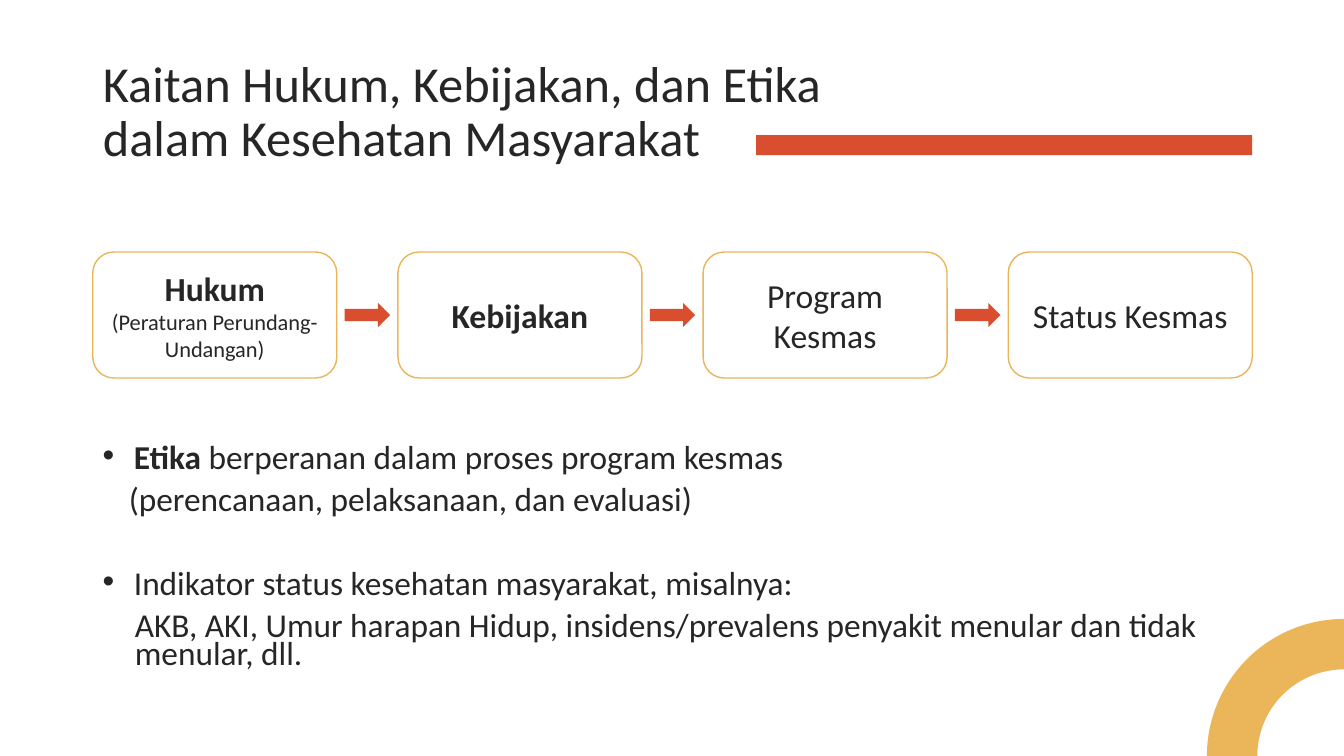
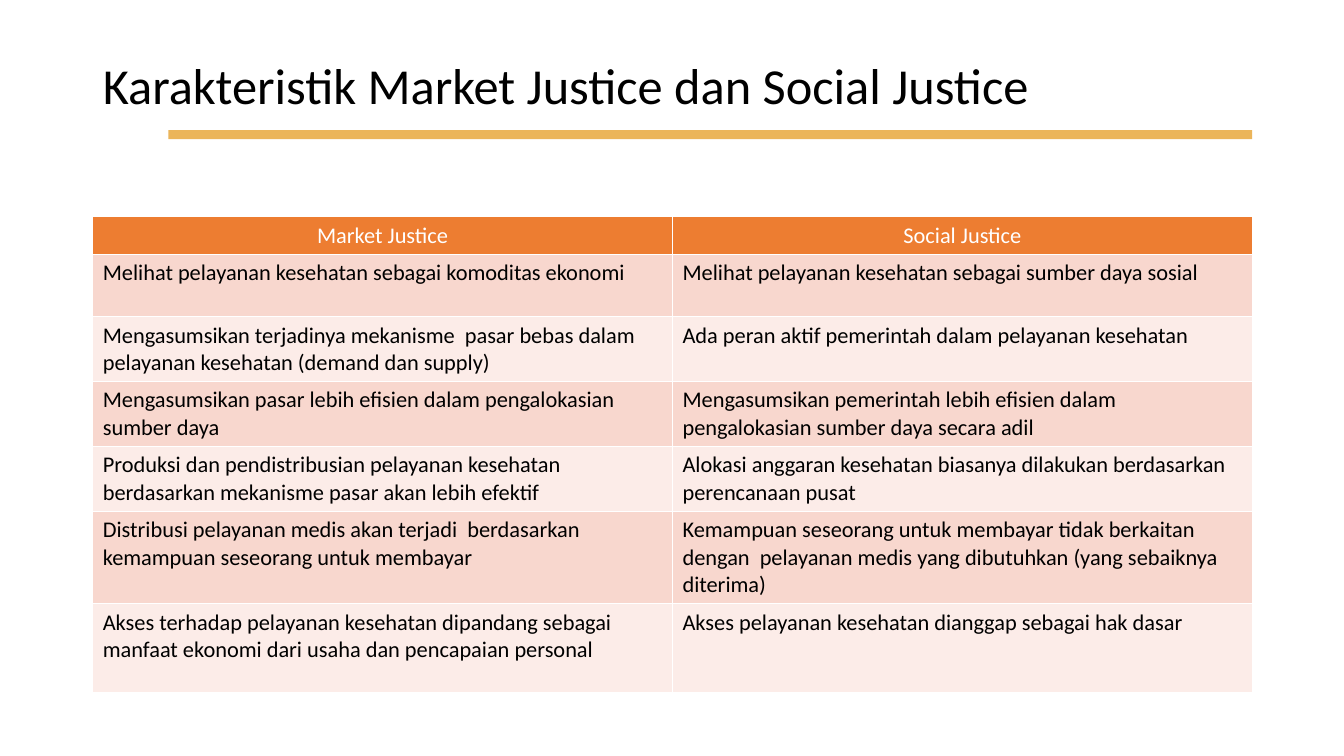
"""Build two slides on law, policy and ethics in public health."""
import pptx
import pptx.dml.color
import pptx.enum.shapes
import pptx.enum.text
import pptx.oxml
import pptx.oxml.ns
import pptx.util

Inches, Pt = pptx.util.Inches, pptx.util.Pt
Color = pptx.dml.color.RGBColor
Shape = pptx.enum.shapes.MSO_SHAPE
Align, Anchor = pptx.enum.text.PP_ALIGN, pptx.enum.text.MSO_ANCHOR
Fit = pptx.enum.text.MSO_AUTO_SIZE

INK = Color(0x26, 0x26, 0x26)
BLACK = Color(0, 0, 0)
WHITE = Color(255, 255, 255)
RED = Color(0xD8, 0x4E, 0x2E)
GOLD = Color(0xEB, 0xB5, 0x5A)
HEAD = Color(0xED, 0x7D, 0x31)
BANDS = Color(0xF8, 0xD7, 0xCE), Color(0xFC, 0xEC, 0xE8)

WIDE, HIGH = 13.33, 7.5
LEFT, SPAN = 0.92, 11.5

STEPS = [
    [("Hukum", 24, True), ("(Peraturan Perundang-Undangan)", 16, False)],
    [("Kebijakan", 24, True)],
    [("Program Kesmas", 24, False)],
    [("Status Kesmas", 24, False)],
]
NOTES = [
    {"runs": [("Etika ", True), ("berperanan dalam proses program kesmas", False)],
     "dot": True, "left": 0.31, "gap": 10},
    {"runs": [("(perencanaan, pelaksanaan, dan evaluasi)", False)],
     "dot": False, "left": 0.26, "gap": 10},
    {"runs": [("Indikator status kesehatan masyarakat, misalnya:", False)],
     "dot": True, "left": 0.31, "gap": 40},
    {"runs": [("AKB, AKI, Umur harapan Hidup, insidens/prevalens penyakit menular "
               "dan tidak menular, dll.", False)],
     "dot": False, "left": 0.32, "gap": 10},
]
ROWS = [
    (0.36, "Market Justice", "Social Justice"),
    (0.62, "Melihat pelayanan kesehatan sebagai komoditas ekonomi",
     "Melihat pelayanan kesehatan sebagai sumber daya sosial"),
    (0.62, "Mengasumsikan terjadinya mekanisme  pasar bebas dalam pelayanan "
     "kesehatan (demand dan supply)",
     "Ada peran aktif pemerintah dalam pelayanan kesehatan"),
    (0.62, "Mengasumsikan pasar lebih efisien dalam pengalokasian sumber daya",
     "Mengasumsikan pemerintah lebih efisien dalam pengalokasian sumber daya "
     "secara adil"),
    (0.62, "Produksi dan pendistribusian pelayanan kesehatan berdasarkan "
     "mekanisme pasar akan lebih efektif",
     "Alokasi anggaran kesehatan biasanya dilakukan berdasarkan perencanaan pusat"),
    (0.88, "Distribusi pelayanan medis akan terjadi  berdasarkan kemampuan "
     "seseorang untuk membayar",
     "Kemampuan seseorang untuk membayar tidak berkaitan dengan  pelayanan medis "
     "yang dibutuhkan (yang sebaiknya diterima)"),
    (0.88, "Akses terhadap pelayanan kesehatan dipandang sebagai manfaat ekonomi "
     "dari usaha dan pencapaian personal",
     "Akses pelayanan kesehatan dianggap sebagai hak dasar"),
]


def style(item, **vals):
    for name, val in vals.items():
        setattr(item, name, val)


def write(par, text, size, color, bold=False):
    run = par.add_run()
    run.text = text
    style(run.font, name="Calibri", size=Pt(size), bold=bold)
    run.font.color.rgb = color


def place(*box):
    return [Inches(val) for val in box]


def start(deck, text, color, *box):
    slide = deck.slides.add_slide(deck.slide_layouts[5])
    title = slide.shapes.title
    style(title, **dict(zip(("left", "top", "width", "height"), place(*box))))
    style(title.text_frame, word_wrap=True, auto_size=Fit.NONE,
          vertical_anchor=Anchor.MIDDLE)
    par = title.text_frame.paragraphs[0]
    style(par, alignment=Align.LEFT, line_spacing=0.9)
    write(par, text, 36, color)
    return slide


def draw(slide, kind, fill, *box):
    shape = slide.shapes.add_shape(kind, *place(*box))
    shape.shadow.inherit = False
    shape.line.fill.background()
    if fill is None:
        shape.fill.background()
    else:
        shape.fill.solid()
        shape.fill.fore_color.rgb = fill
    return shape


def add_flow(slide):
    top, width, height, arrow, tall = 2.5, 2.42, 1.25, 0.45, 0.24
    pitch = (SPAN - width) / (len(STEPS) - 1)
    for num, lines in enumerate(STEPS):
        left = LEFT + num * pitch
        card = draw(slide, Shape.ROUNDED_RECTANGLE, None, left, top, width, height)
        card.line.color.rgb = GOLD
        card.line.width = Pt(1)
        frame = card.text_frame
        style(frame, word_wrap=True, vertical_anchor=Anchor.MIDDLE)
        for row, (text, size, bold) in enumerate(lines):
            par = frame.add_paragraph() if row else frame.paragraphs[0]
            par.alignment = Align.CENTER
            write(par, text, size, INK, bold)
        if num:
            draw(slide, Shape.RIGHT_ARROW, RED, left - (pitch - width + arrow) / 2,
                 top + (height - tall) / 2, arrow, tall)


def add_notes(slide):
    frame = slide.shapes.add_textbox(*place(LEFT, 4.39, SPAN, 2.36)).text_frame
    frame.word_wrap = True
    for num, note in enumerate(NOTES):
        par = frame.add_paragraph() if num else frame.paragraphs[0]
        style(par, line_spacing=0.7, space_before=Pt(note["gap"]))
        props = par._p.get_or_add_pPr()
        props.set("marL", str(Inches(note["left"])))
        if note["dot"]:
            props.set("indent", str(-Inches(note["left"])))
            for tag, key, val in (("buFont", "typeface", "Arial"), ("buChar", "char", "•")):
                mark = pptx.oxml.parse_xml(
                    f'<a:{tag} {pptx.oxml.ns.nsdecls("a")} {key}="{val}"/>')
                props.append(mark)
        for text, bold in note["runs"]:
            write(par, text, 23.8, INK, bold)


def add_edges(cell):
    props = cell._tc.get_or_add_tcPr()
    for side in "LRTB":
        props.append(pptx.oxml.parse_xml(
            f'<a:ln{side} {pptx.oxml.ns.nsdecls("a")} w="{Pt(1)}"><a:solidFill>'
            f'<a:srgbClr val="{WHITE}"/></a:solidFill></a:ln{side}>'))


def add_grid(slide):
    total = sum(row[0] for row in ROWS)
    table = slide.shapes.add_table(
        len(ROWS), 2, *place(LEFT, 2.15, SPAN, total)).table
    for num, (height, *texts) in enumerate(ROWS):
        table.rows[num].height = Inches(height)
        for col, text in enumerate(texts):
            cell = table.cell(num, col)
            add_edges(cell)
            cell.fill.solid()
            cell.fill.fore_color.rgb = BANDS[(num - 1) % 2] if num else HEAD
            par = cell.text_frame.paragraphs[0]
            par.alignment = Align.LEFT if num else Align.CENTER
            write(par, text, 16, BLACK if num else WHITE)


def main():
    deck = pptx.Presentation()
    style(deck, slide_width=Inches(WIDE), slide_height=Inches(HIGH))

    slide = start(deck, "Kaitan Hukum, Kebijakan, dan Etika dalam Kesehatan Masyarakat",
                  INK, LEFT, 0.4, 7.83, 1.45)
    draw(slide, Shape.RECTANGLE, RED, 7.5, 1.34, 4.92, 0.2)
    add_notes(slide)
    add_flow(slide)
    reach, thick = 1.36, 0.5
    arc = draw(slide, Shape.BLOCK_ARC, GOLD, WIDE - reach, HIGH - reach,
               2 * reach, 2 * reach)
    for num, val in enumerate((108, 162, thick / (2 * reach))):
        arc.adjustments[num] = val

    slide = start(deck, "Karakteristik Market Justice dan Social Justice",
                  BLACK, LEFT, 0.37, 10.46, 1.01)
    add_grid(slide)
    draw(slide, Shape.RECTANGLE, GOLD, 1.67, 1.29, 10.75, 0.09)
    deck.save("out.pptx")


if __name__ == "__main__":
    main()
